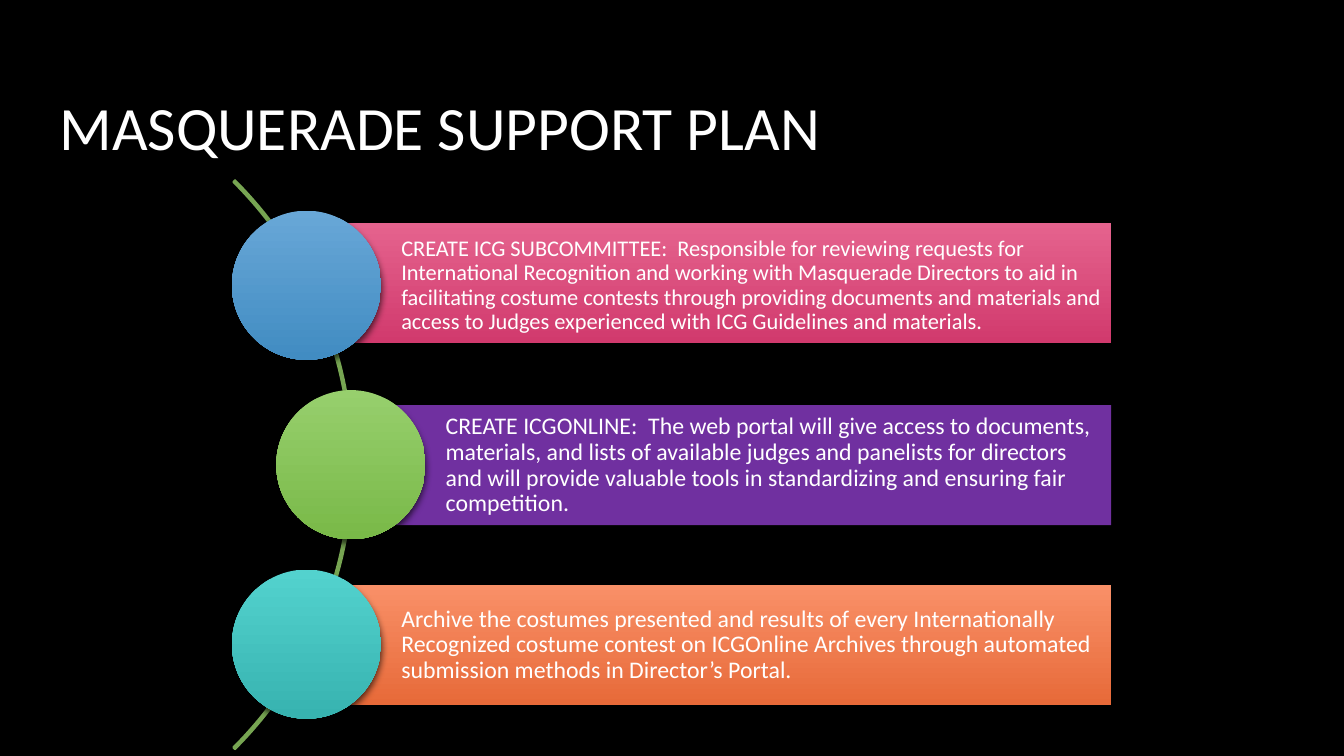
from lxml import etree
from pptx import Presentation
from pptx.dml.color import RGBColor
from pptx.enum import shapes, text
from pptx.oxml import ns
from pptx.util import Inches, Pt

BLACK = RGBColor(0x00, 0x00, 0x00)
WHITE = RGBColor(0xFF, 0xFF, 0xFF)
ARC_GREEN = RGBColor(0x77, 0xA5, 0x52)
PURPLE = RGBColor(0x70, 0x30, 0xA0)
PINKS = (RGBColor(0xE5, 0x63, 0x8E), RGBColor(0xD1, 0x3A, 0x6D))
ORANGES = (RGBColor(0xF9, 0x90, 0x68), RGBColor(0xE7, 0x6A, 0x39))
BLUES = (RGBColor(0x68, 0xA7, 0xD7), RGBColor(0x41, 0x8C, 0xC2))
GREENS = (RGBColor(0x97, 0xCF, 0x6D), RGBColor(0x79, 0xB9, 0x48))
TEALS = (RGBColor(0x53, 0xD2, 0xCE), RGBColor(0x37, 0xB3, 0xB0))

FONT = "Calibri"
BAR_H, BAR_RIGHT, CIRCLE = 1.19, 11.02, 1.48
ROW_STEP = 1.78

# Circle centre x, bar top, top inset, text size, bar colours, circle colours, wording
STEPS = [
    (3.04, 2.21, 0.1, 16, PINKS, BLUES,
     "CREATE ICG SUBCOMMITTEE:  Responsible for reviewing requests for "
     "International Recognition and working with Masquerade Directors to aid in "
     "facilitating costume contests through providing documents and materials and "
     "access to Judges experienced with ICG Guidelines and materials."),
    (3.48, 4.02, 0.05, 17, (PURPLE,), GREENS,
     "CREATE ICGONLINE:  The web portal will give access to documents, materials, "
     "and lists of available judges and panelists for directors and will provide "
     "valuable tools in standardizing and ensuring fair competition."),
    (3.04, 5.8, 0.05, 17, ORANGES, TEALS,
     "Archive the costumes presented and results of every Internationally "
     "Recognized costume contest on ICGOnline Archives through automated "
     "submission methods in Director’s Portal."),
]


def add_shadow(sp):
    sp.shadow.inherit = False
    effects = sp._element.spPr.find(ns.qn("a:effectLst"))
    outer = etree.SubElement(effects, ns.qn("a:outerShdw"), blurRad=str(Pt(5)),
                             dist=str(Pt(3)), dir="5400000", rotWithShape="0")
    color = etree.SubElement(outer, ns.qn("a:srgbClr"), val="000000")
    etree.SubElement(color, ns.qn("a:alpha"), val="65000")


def add_filled(s, kind, left, top, width, height, colors):
    sp = s.shapes.add_shape(kind, Inches(left), Inches(top), Inches(width), Inches(height))
    if len(colors) == 1:
        sp.fill.solid()
        sp.fill.fore_color.rgb = colors[0]
    else:
        sp.fill.gradient()
        sp.fill.gradient_angle = 270
        for stop, color in zip(sp.fill.gradient_stops, colors):
            stop.color.rgb = color
    sp.line.fill.background()
    add_shadow(sp)
    return sp


def format_text(tf, size):
    p = tf.paragraphs[0]
    p.alignment = text.PP_ALIGN.LEFT
    p.line_spacing = 0.9
    f = p.runs[0].font
    f.name, f.size, f.color.rgb = FONT, Pt(size), WHITE


def add_title(s, left, top, width, height):
    title = s.shapes.title
    title.left, title.top = Inches(left), Inches(top)
    title.width, title.height = Inches(width), Inches(height)
    tf = title.text_frame
    tf.text = "MASQUERADE SUPPORT PLAN"
    tf.word_wrap = False
    tf.auto_size = text.MSO_AUTO_SIZE.NONE
    tf.vertical_anchor = text.MSO_ANCHOR.MIDDLE
    format_text(tf, 44)
    tf.paragraphs[0].line_spacing = 1.0


def add_arc(s, left, top, size):
    arc = s.shapes.add_shape(shapes.MSO_SHAPE.BLOCK_ARC, Inches(left), Inches(top),
                             Inches(size), Inches(size))
    # From 315 to 45 degrees, as a thin band
    for i, value in enumerate((189, 27, 0.003)):
        arc.adjustments[i] = value
    arc.fill.background()
    arc.line.color.rgb = ARC_GREEN
    arc.line.width = Pt(1.5)
    arc.shadow.inherit = False


def add_step(s, center_x, center_y, bar_top, inset_top, size, bar_colors,
             circle_colors, wording):
    # Bar with its wording
    bar = add_filled(s, shapes.MSO_SHAPE.RECTANGLE, center_x, bar_top,
                     BAR_RIGHT - center_x, BAR_H, bar_colors)
    tf = bar.text_frame
    tf.text = wording
    tf.word_wrap = True
    tf.vertical_anchor = text.MSO_ANCHOR.MIDDLE
    tf.margin_left, tf.margin_top = Inches(0.94), Inches(inset_top)
    tf.margin_right = tf.margin_bottom = Inches(0.04)
    format_text(tf, size)
    # Circle over the bar's left end
    add_filled(s, shapes.MSO_SHAPE.OVAL, center_x - CIRCLE / 2, center_y - CIRCLE / 2,
               CIRCLE, CIRCLE, circle_colors)


def main():
    prs = Presentation()
    prs.slide_width, prs.slide_height = Inches(13.33), Inches(7.5)
    s = prs.slides.add_slide(prs.slide_layouts[5])
    s.background.fill.solid()
    s.background.fill.fore_color.rgb = BLACK

    add_title(s, 0.49, 0.83, 7.83, 0.84)
    add_arc(s, -4.48, 0.62, 7.98)
    for i, (center_x, *step) in enumerate(STEPS):
        add_step(s, center_x, 2.83 + i * ROW_STEP, *step)

    prs.save("out.pptx")


if __name__ == "__main__":
    main()
